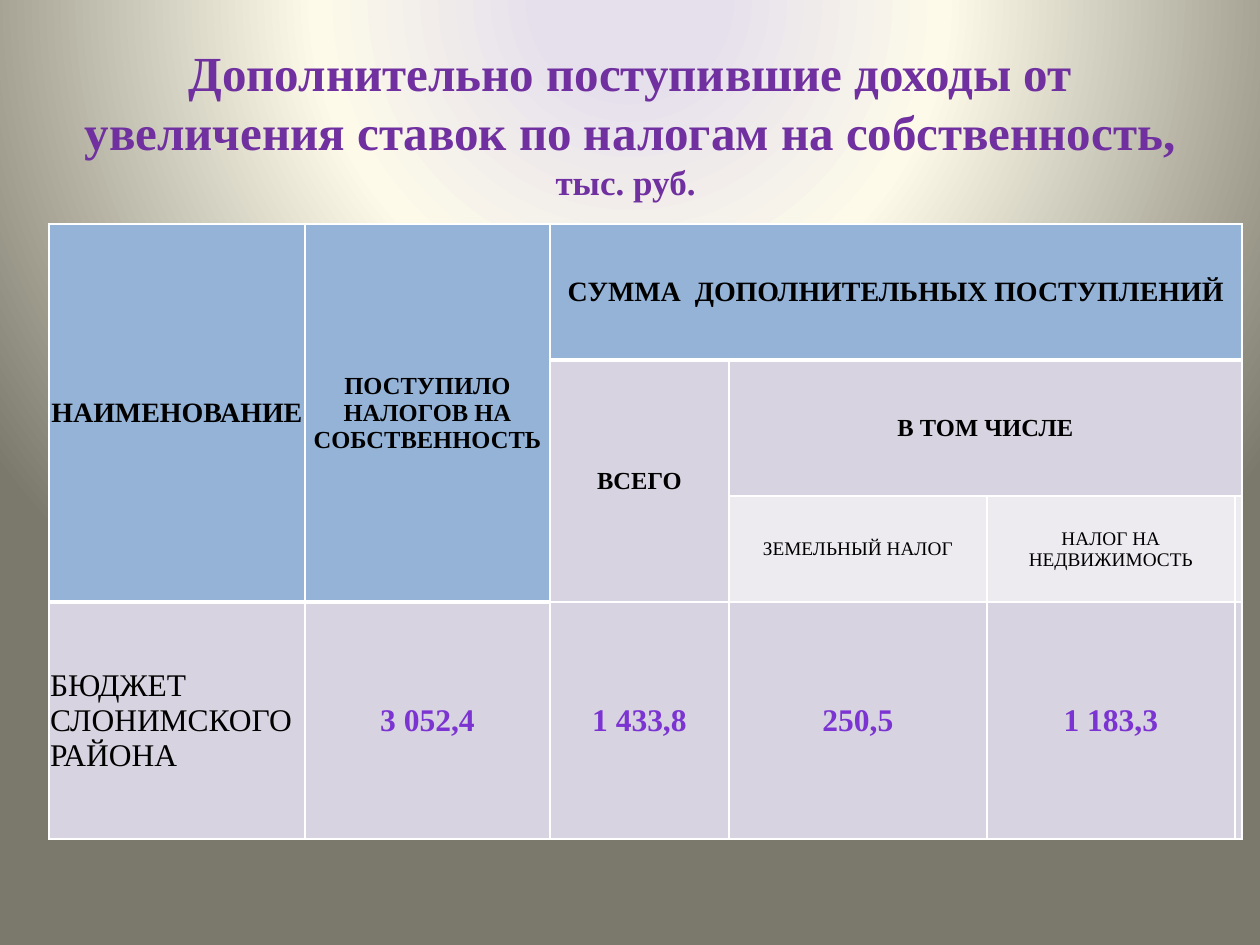
from lxml.etree import SubElement
from pptx import Presentation
from pptx.dml.color import RGBColor
from pptx.enum.text import MSO_ANCHOR, PP_ALIGN
from pptx.oxml import parse_xml
from pptx.oxml.ns import nsdecls, qn
from pptx.util import Emu, Pt

HUES = {"title": "7030A0", "head": "95B3D7", "band": "D8D3E0", "light": "EDEAF0",
        "text": "000000", "value": "7B34D2", "edge": "FFFFFF"}
FONT = "Times New Roman"
GLOW = [(0, "E6E0EC"), (11, "E6E0EC"), (40, "FDFAEA"), (100, "7B796B")]

TITLE = [("Дополнительно поступившие доходы от увеличения ставок по налогам на собственность, ", 28),
         ("тыс. руб. ", 20)]
COLS = [256, 245, 179, 258, 248, 5]
ROWS = [136, 136, 106, 237]
# row, column, rows spanned, columns spanned, text, format
CELLS = [
    (0, 0, 3, 1, "НАИМЕНОВАНИЕ", dict(size=16, bold=True)),
    (0, 1, 3, 1, "ПОСТУПИЛО НАЛОГОВ НА СОБСТВЕННОСТЬ", dict(size=14, bold=True)),
    (0, 2, 1, 4, "СУММА  ДОПОЛНИТЕЛЬНЫХ ПОСТУПЛЕНИЙ", dict(size=16, bold=True)),
    (1, 2, 2, 1, "ВСЕГО", dict(size=14, bold=True)),
    (1, 3, 1, 3, "В ТОМ ЧИСЛЕ", dict(size=14, bold=True)),
    (2, 3, 1, 1, "ЗЕМЕЛЬНЫЙ НАЛОГ", dict(size=11)),
    (2, 4, 1, 1, "НАЛОГ НА НЕДВИЖИМОСТЬ", dict(size=11)),
    (3, 0, 1, 1, "БЮДЖЕТ СЛОНИМСКОГО РАЙОНА", dict(size=18, align=PP_ALIGN.LEFT)),
]
VALUES = ["3 052,4", "1 433,8", "250,5", "1 183,3"]
CELLS += [(3, col, 1, 1, value, dict(size=18, bold=True, hue="value"))
          for col, value in enumerate(VALUES, 1)]


def px(count):
    return Emu(round(count * 914400 / 126))


def color(name):
    return RGBColor.from_string(HUES[name])


def write(para, text, size, bold=False, hue="text", align=PP_ALIGN.CENTER):
    para.alignment = align
    run = para.add_run()
    run.text = text
    font = run.font
    font.name, font.size, font.bold = FONT, Pt(size), bold
    font.color.rgb = color(hue)


def paint_back(slide):
    """Fill the background with a round glow centred above the slide."""
    stops = "".join(f'<a:gs pos="{pos * 1000}"><a:srgbClr val="{hue}"/></a:gs>'
                    for pos, hue in GLOW)
    fill = slide.background.fill
    fill.solid()
    props = slide.element.find(".//" + qn("p:bgPr"))
    props.replace(props[0], parse_xml(
        f'<a:gradFill {nsdecls("a")} rotWithShape="1"><a:gsLst>{stops}</a:gsLst>'
        '<a:path path="circle"><a:fillToRect l="50000" t="-80000" r="50000" b="180000"/>'
        '</a:path></a:gradFill>'))


def is_head(row, col):
    return row == 0 or (0 < row < 3 and col < 2)


def style(cell, row, col):
    """Set the fill, margins and borders that follow from the cell's place."""
    head = is_head(row, col)
    name = "head" if head else "light" if row == 2 and col > 2 else "band"
    cell.fill.solid()
    cell.fill.fore_color.rgb = color(name)
    cell.vertical_anchor = MSO_ANCHOR.MIDDLE
    cell.margin_left = cell.margin_right = cell.margin_top = px(1)
    cell.margin_bottom = 0
    under = row > 0 and not head and is_head(row - 1, col)
    widths = {"L": 1, "R": 1, "T": 3 if under else 1, "B": 3 if head else 1}
    props = cell._tc.get_or_add_tcPr()
    for spot, (side, width) in enumerate(widths.items()):
        line = SubElement(props, qn("a:ln" + side), w=str(Pt(width)))
        SubElement(SubElement(line, qn("a:solidFill")), qn("a:srgbClr"), val=HUES["edge"])
        props.insert(spot, line)


def add_title(slide):
    title = slide.shapes.title
    title.left, title.top, title.width, title.height = map(px, (63, 29, 1134, 187))
    title.text_frame.vertical_anchor = MSO_ANCHOR.MIDDLE
    title.text_frame.word_wrap = True
    for text, size in TITLE:
        write(title.text_frame.paragraphs[0], text, size, bold=True, hue="title")


def add_grid(slide):
    table = slide.shapes.add_table(len(ROWS), len(COLS), px(49), px(224),
                                   px(sum(COLS)), px(sum(ROWS))).table
    for col, width in zip(table.columns, COLS):
        col.width = px(width)
    for row, height in zip(table.rows, ROWS):
        row.height = px(height)
    for row in range(len(ROWS)):
        for col in range(len(COLS)):
            style(table.cell(row, col), row, col)
    for row, col, down, wide, text, look in CELLS:
        cell = table.cell(row, col)
        if down * wide > 1:
            cell.merge(table.cell(row + down - 1, col + wide - 1))
        write(cell.text_frame.paragraphs[0], text, **look)


def main():
    deck = Presentation()
    deck.slide_width, deck.slide_height = px(1260), px(945)
    slide = deck.slides.add_slide(deck.slide_layouts[5])
    paint_back(slide)
    add_title(slide)
    add_grid(slide)
    deck.save("out.pptx")


if __name__ == "__main__":
    main()
